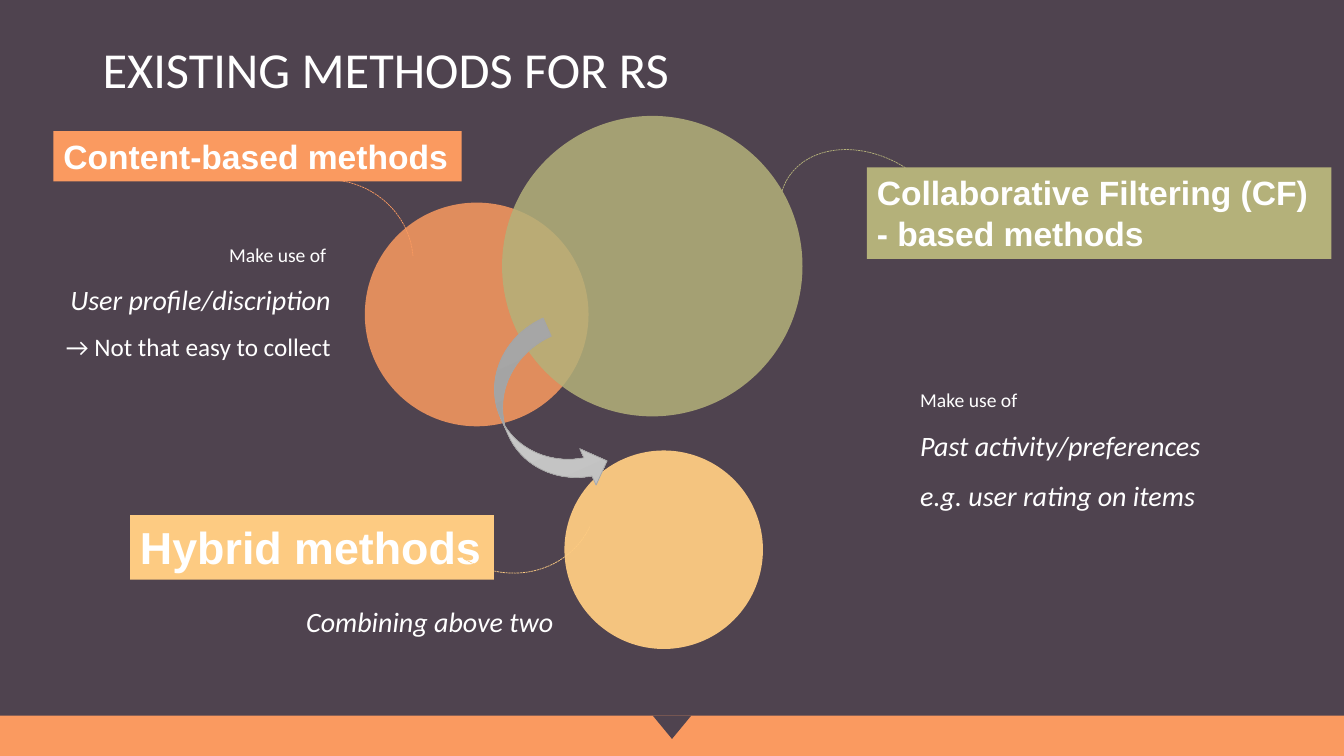
from dataclasses import dataclass
from lxml.etree import SubElement
from pptx import Presentation
from pptx.dml.color import RGBColor as RGB
from pptx.enum.dml import MSO_LINE_DASH_STYLE as Dash
from pptx.enum.shapes import MSO_SHAPE as Kind
from pptx.enum.text import MSO_AUTO_SIZE as Fit, PP_ALIGN as Align
from pptx.oxml.ns import qn
from pptx.util import Pt


@dataclass(frozen=True)
class Theme:
    back: str = "4F434F"
    orange: str = "FA9A60"
    olive: str = "B4B17A"
    yellow: str = "FDCB82"
    white: str = "FFFFFF"
    edge: str = "A5A5A5"
    light: str = "D2D2D2"
    dark: str = "C0C0C0"
    body: str = "Calibri"
    bold: str = "Arial"
    title: int = 36
    big: int = 32
    head: int = 24
    main: int = 20
    note: int = 18
    small: int = 14


T = Theme()


def color(code):
    return RGB.from_string(code)


def paint(fill, code):
    fill.solid()
    fill.fore_color.rgb = color(code)


def shape(slide, kind, box, turn=0):
    item = slide.shapes.add_shape(kind, *map(Pt, box))
    item.shadow.inherit = False
    item.rotation = turn
    return item


def solid(slide, kind, box, code, turn=0):
    item = shape(slide, kind, box, turn)
    paint(item.fill, code)
    item.line.fill.background()
    return item


def circle(slide, left, top, size, code, alpha):
    item = solid(slide, Kind.OVAL, (left, top, size, size), code)
    tint = item.fill._xPr.find(qn("a:solidFill"))[0]
    SubElement(tint, qn("a:alpha"), val=str(alpha * 1000))


def arc(slide, box, code, start, end, turn=0, flip=False):
    item = shape(slide, Kind.ARC, box, turn)
    item.adjustments[0] = start
    item.adjustments[1] = end
    item.fill.background()
    item.line.color.rgb = color(code)
    item.line.width = Pt(0.5)
    item.line.dash_style = Dash.SQUARE_DOT
    if flip:
        item._element.spPr.find(qn("a:xfrm")).set("flipV", "1")


def arrow(slide, box, turn):
    item = shape(slide, Kind.CURVED_RIGHT_ARROW, box, turn)
    item.fill.gradient()
    item.fill.gradient_angle = 270
    for stop, code in zip(item.fill.gradient_stops, (T.light, T.dark)):
        stop.color.rgb = color(code)
    item.line.color.rgb = color(T.edge)
    item.line.width = Pt(0.5)


def text(slide, box, lines, font=T.body, bold=False, align=Align.LEFT, space=1.0):
    item = slide.shapes.add_textbox(*map(Pt, box))
    frame = item.text_frame
    frame.word_wrap = True
    for index, (words, size, slant) in enumerate(lines):
        para = frame.add_paragraph() if index else frame.paragraphs[0]
        para.alignment = align
        para.line_spacing = space
        run = para.add_run()
        run.text = words
        run.font.name = font
        run.font.size = Pt(size)
        run.font.bold = bold
        run.font.italic = slant
        run.font.color.rgb = color(T.white)
    return item


def label(slide, box, code, size, *lines):
    item = text(slide, box, [(words, size, False) for words in lines], T.bold, True)
    paint(item.fill, code)
    item.text_frame.word_wrap = False
    item.text_frame.auto_size = Fit.SHAPE_TO_FIT_TEXT


def main():
    deck = Presentation()
    deck.slide_width, deck.slide_height = Pt(960), Pt(540)
    slide = deck.slides.add_slide(deck.slide_layouts[6])
    paint(slide.background.fill, T.back)

    solid(slide, Kind.RECTANGLE, (0, 511.2, 960, 28.8), T.orange)
    solid(slide, Kind.ISOSCELES_TRIANGLE, (466.3, 511.2, 27.4, 16.6), T.back, 180)
    circle(slide, 260.6, 144.7, 159.8, T.orange, 85)
    text(slide, (66.2, 28.8, 828, 104.4),
         [("EXISTING METHODS FOR RS", T.title, False)], space=0.9)
    circle(slide, 403.2, 321.8, 141.8, T.yellow, 95)

    arc(slide, (568.8, 95.8, 100.8, 132.5), T.olive, 156.7, 1.27, 301.6)
    label(slide, (619.2, 119.5, 331.9, 65.5), T.olive, T.head,
          "Collaborative Filtering (CF)", "- based methods")
    text(slide, (650.2, 265, 226.1, 131),
         [("Make use of", T.small, False),
          ("Past activity/preferences", T.main, True),
          ("e.g. user rating on items", T.main, True)], space=1.5)

    label(slide, (92.9, 367.9, 259.9, 46.1), T.yellow, T.big, "Hybrid methods")
    text(slide, (176.4, 428.4, 226.1, 31.7),
         [("Combining above two", T.main, True)], align=Align.RIGHT)

    label(slide, (38.2, 93.6, 291.6, 36), T.orange, T.head, "Content-based methods")
    text(slide, (0, 161.3, 243.4, 101.5),
         [("Make use of ", T.small, False),
          ("User profile/discription", T.main, True),
          ("→ Not that easy to collect", T.note, False)],
         align=Align.RIGHT, space=1.5)

    arc(slide, (170.6, 128.2, 124.6, 118.1), T.orange, 162, 213.5)
    arc(slide, (302.4, 291.6, 124.6, 117.4), T.yellow, 151.55, 213.5, 19.8, True)
    circle(slide, 358.6, 82.8, 214.6, T.olive, 85)
    arrow(slide, (359.3, 233.3, 56.9, 126), 335.9)
    deck.save("out.pptx")


if __name__ == "__main__":
    main()
